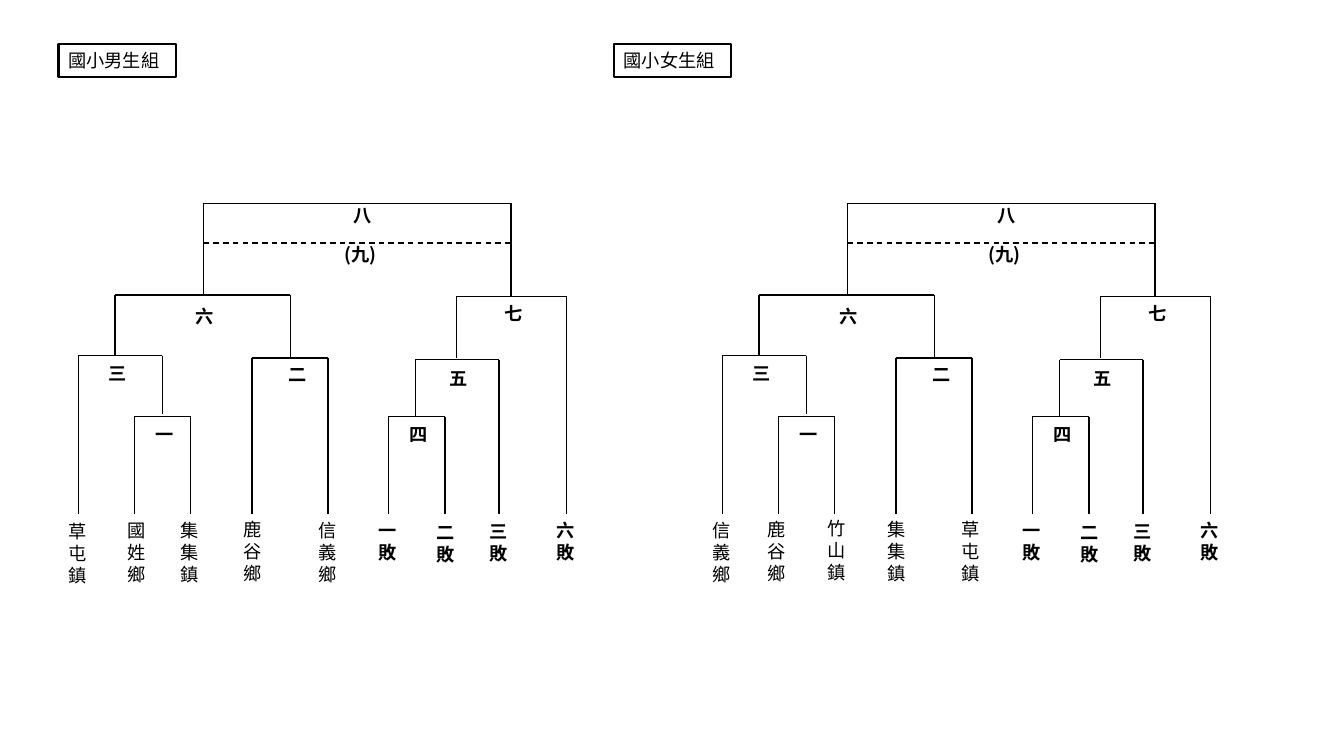
"""Draws the boys' and girls' primary school tournament brackets side by side."""
from lxml import etree
from pptx import Presentation
from pptx import util as u
from pptx.dml.color import RGBColor
from pptx.enum import dml, shapes, text
from pptx.oxml import ns

BLACK = RGBColor(0, 0, 0)
FONT = "Noto Sans CJK SC"
GROUP_SHIFT = 460
FOOT = 367

MATCHES = [
    ("一", 103.7, 298.8, 18.7, 96, 136, 297.5, FOOT, FOOT),
    ("二", 198.7, 255.6, 24.5, 180, 234.3, 255.6, FOOT, FOOT),
    ("三", 70.6, 254.9, 24.5, 56, 116, 254, FOOT, 296),
    ("四", 285.8, 298.8, 18.7, 277.3, 318, 297.7, FOOT, FOOT),
    ("五", 313.9, 258.5, 21.6, 296.8, 356.5, 257, 297.5, FOOT),
    ("六", 132.5, 214.6, 24.5, 82.2, 207.4, 210.7, 253.5, 255),
    ("七", 353.5, 212.4, 23, 326.2, 404.5, 211.7, 255.6, FOOT),
    ("八", 245.5, 142.6, 16.6, 145.5, 365, 145.3, 209.7, 211.7),
]
LOSERS = [("一敗", 263.5, 367.2), ("二敗", 304.6, 368.6),
          ("三敗", 342.7, 367.9), ("六敗", 390.2, 367.2)]
GROUPS = [
    ("國小男生組", 41.8, 0,
     [("草屯鎮", 41.8, 367.9), ("國姓鄉", 84.2, 367.2), ("集集鎮", 121.7, 367.2),
      ("鹿谷鄉", 167, 366.5), ("信義鄉", 220.3, 367.2)]),
    ("國小女生組", 438.5, GROUP_SHIFT,
     [("信義鄉", 501.8, 367.2), ("鹿谷鄉", 541.4, 366.5), ("竹山鎮", 583.9, 365.8),
      ("集集鎮", 627.1, 366.5), ("草屯鎮", 679.7, 366.5)]),
]


class BracketSlide:
    def __init__(self, page):
        self.page = page
        self.size = 13
        self.pitch = 15.7

    def fill_text(self, box, words, bold):
        frame = box.text_frame
        frame.word_wrap = True
        para = frame.paragraphs[0]
        para.alignment = text.PP_ALIGN.LEFT
        para.line_spacing = u.Pt(self.pitch)
        span = para.add_run()
        span.text = words
        span.font.size = u.Pt(self.size)
        span.font.bold = bold
        span.font.name = FONT
        span.font.color.rgb = BLACK
        east = etree.SubElement(span.font._element, ns.qn("a:ea"))
        east.set("typeface", FONT)

    def label(self, words, left, top, width, height, bold=True):
        box = self.page.shapes.add_textbox(
            u.Pt(left), u.Pt(top), u.Pt(width), u.Pt(height))
        self.fill_text(box, words, bold)

    def heading(self, words, left):
        box = self.page.shapes.add_shape(
            shapes.MSO_SHAPE.RECTANGLE, u.Pt(left), u.Pt(31.5), u.Pt(83.7), u.Pt(23.3))
        box.shadow.inherit = False
        box.fill.background()
        box.line.color.rgb = BLACK
        box.line.width = u.Pt(1.5)
        box.text_frame.vertical_anchor = text.MSO_ANCHOR.MIDDLE
        self.fill_text(box, words, False)

    def line(self, x1, y1, x2, y2, dashed=False):
        stroke = self.page.shapes.add_connector(
            shapes.MSO_CONNECTOR.STRAIGHT, u.Pt(x1), u.Pt(y1), u.Pt(x2), u.Pt(y2))
        stroke.line.color.rgb = BLACK
        stroke.line.width = u.Pt(1)
        if dashed:
            stroke.line.dash_style = dml.MSO_LINE.DASH
        etree.SubElement(stroke._element.spPr, ns.qn("a:effectLst"))

    def bracket(self, left, right, top, left_foot, right_foot):
        self.line(left, top, right, top)
        self.line(left, top, left, left_foot)
        self.line(right, top, right, right_foot)

    def tournament(self, shift):
        for name, label_left, label_top, width, left, right, *heights in MATCHES:
            self.bracket(left + shift, right + shift, *heights)
            self.label(name, label_left + shift, label_top, width, 19.4)
        self.line(145.5 + shift, 173.5, 365 + shift, 173.5, dashed=True)
        self.label("(九)", 239 + shift, 169.9, 43.9, 23)
        for name, left, top in LOSERS:
            self.label(name, left + shift, top, 18.7, 38.9)


def main():
    deck = Presentation()
    deck.slide_width, deck.slide_height = u.Pt(960), u.Pt(540)
    sheet = BracketSlide(deck.slides.add_slide(deck.slide_layouts[6]))
    for title, title_left, shift, teams in GROUPS:
        sheet.heading(title, title_left)
        sheet.tournament(shift)
        for team, left, top in teams:
            sheet.label(team, left, top, 24, 54.7, bold=False)
    deck.save("out.pptx")


if __name__ == "__main__":
    main()
